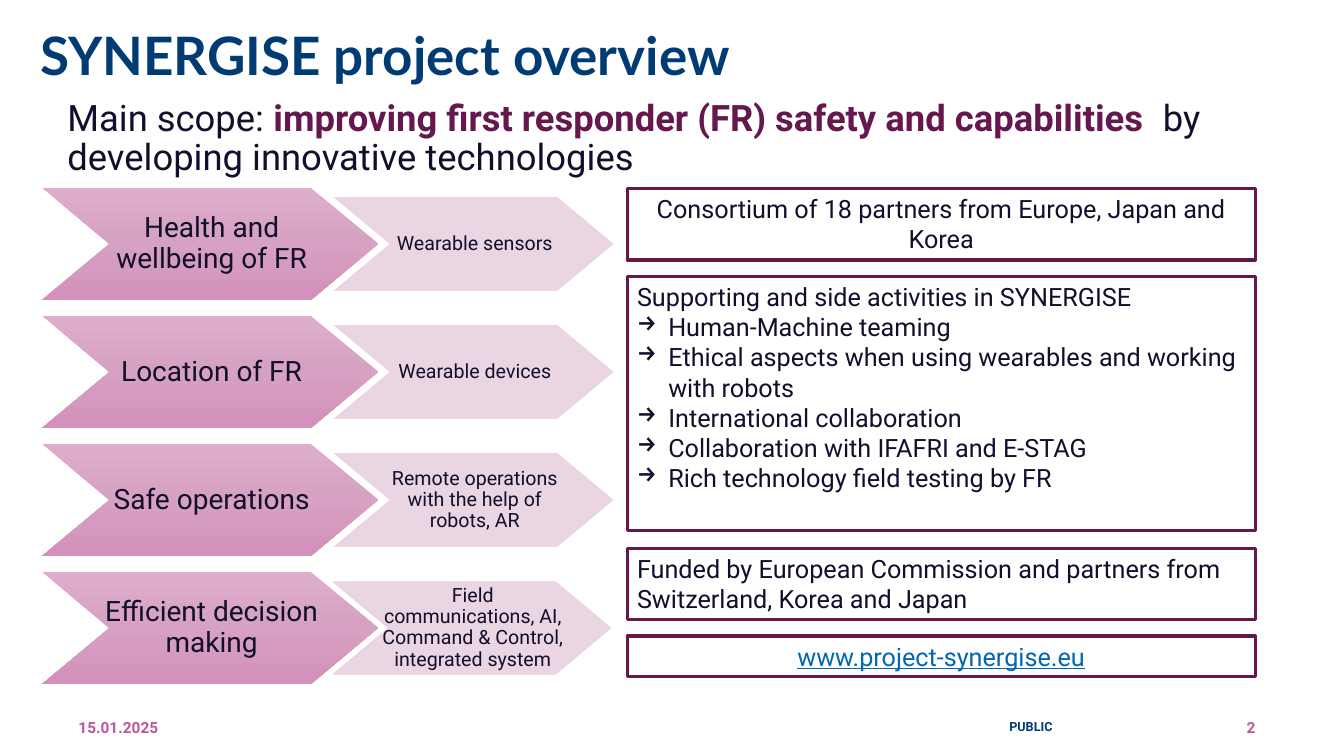
from lxml import etree
from pptx import Presentation
from pptx.dml.color import RGBColor
from pptx.enum.shapes import MSO_SHAPE as Preset
from pptx.enum.text import MSO_ANCHOR as Anchor, PP_ALIGN as Align
from pptx.oxml import parse_xml
from pptx.oxml.ns import nsdecls, qn
from pptx.util import Inches, Pt

COLORS = {
    "navy": "003C73", "ink": "110F2B", "plum": "65174E", "pink": "BF579D",
    "link": "0068B1", "pale": "E8D1DF",
    "top": "DDAECB", "middle": "D6A1C2", "bottom": "D390BA",
}
ROW_PITCH = 1.27
FIRST_ROW_CENTER = 2.42

# goal, means, left edge of the means
ROWS = [
    ("Health and wellbeing of FR", "Wearable sensors", 3.32),
    ("Location of FR", "Wearable devices", 3.32),
    ("Safe operations", "Remote operations with the help of robots, AR", 3.32),
    ("Efficient decision making",
     "Field communications, AI, Command & Control, integrated system", 3.3),
]
ACTIVITIES = [
    "Human-Machine teaming",
    "Ethical aspects when using wearables and working with robots",
    "International collaboration",
    "Collaboration with IFAFRI and E-STAG",
    "Rich technology field testing by FR",
]


def rgb(name):
    return RGBColor.from_string(COLORS[name])


def style(paragraph, size, color, bold=False, align=Align.LEFT, font="Roboto"):
    paragraph.alignment = align
    paragraph.font.name = font
    paragraph.font.size = Pt(size)
    paragraph.font.bold = bold
    paragraph.font.color.rgb = rgb(color)


def add_text(slide, box, text, size, color, anchor=Anchor.MIDDLE, **options):
    frame = slide.shapes.add_textbox(*map(Inches, box)).text_frame
    frame.word_wrap = True
    frame.vertical_anchor = anchor
    paragraph = frame.paragraphs[0]
    paragraph.text = text
    style(paragraph, size, color, **options)
    return paragraph


def add_arrow_bullet(paragraph):
    properties = paragraph._p.get_or_add_pPr()
    properties.set("marL", str(Inches(0.31)))
    properties.set("indent", str(Inches(-0.31)))
    etree.SubElement(properties, qn("a:buChar"), char="→")


def add_panel(slide, top, height, heading, bullets=(), align=Align.LEFT, color="ink"):
    panel = slide.shapes.add_shape(
        Preset.RECTANGLE, *map(Inches, (6.22, top, 6.23, height)))
    panel.shadow.inherit = False
    panel.fill.background()
    panel.line.color.rgb = rgb("plum")
    panel.line.width = Pt(2.25)
    frame = panel.text_frame
    frame.word_wrap = True
    frame.vertical_anchor = Anchor.TOP
    paragraph = frame.paragraphs[0]
    paragraph.text = heading
    style(paragraph, 18, color, align=align)
    for bullet in bullets:
        item = frame.add_paragraph()
        item.text = bullet
        add_arrow_bullet(item)
        style(item, 18, color)
    return paragraph


def add_chevron(slide, left, center, width, height, text, size, side_insets, edge_inset):
    notch = 0.6 * height
    top, bottom, right = center - height / 2, center + height / 2, left + width
    outline = [(right - notch, top), (right, center), (right - notch, bottom),
               (left, bottom), (left + notch, center)]
    builder = slide.shapes.build_freeform(Inches(left), Inches(top))
    builder.add_line_segments([(Inches(x), Inches(y)) for x, y in outline])
    chevron = builder.convert_to_shape()
    chevron.shadow.inherit = False
    frame = chevron.text_frame
    frame.word_wrap = True
    frame.vertical_anchor = Anchor.MIDDLE
    frame.margin_left, frame.margin_right = map(Inches, side_insets)
    frame.margin_top = frame.margin_bottom = Inches(edge_inset)
    paragraph = frame.paragraphs[0]
    paragraph.text = text
    paragraph.line_spacing = 0.9
    style(paragraph, size, "ink", align=Align.CENTER)
    return chevron


def fill_gradient(shape):
    shape.fill.gradient()
    shape.fill.gradient_angle = 270
    stops = shape._element.spPr.find(".//" + qn("a:gsLst"))
    stops[:] = [
        parse_xml(f'<a:gs {nsdecls("a")} pos="{position}">'
                  f'<a:srgbClr val="{COLORS[name]}"/></a:gs>')
        for position, name in ((0, "top"), (50000, "middle"), (100000, "bottom"))]
    shape.line.fill.background()


def fill_pale(shape):
    shape.fill.solid()
    shape.fill.fore_color.rgb = rgb("pale")
    shape.line.color.rgb = rgb("pale")
    shape.line.width = Pt(0.5)
    for color in shape._element.spPr.iter(qn("a:srgbClr")):
        etree.SubElement(color, qn("a:alpha"), val="90000")


def add_scope(slide):
    paragraph = add_text(slide, (0.57, 0.94, 12.2, 0.9), "Main scope: ", 26, "ink",
                         anchor=Anchor.TOP)
    paragraph.line_spacing = 0.9
    emphasis = paragraph.add_run()
    emphasis.text = "improving first responder (FR) safety and capabilities  "
    emphasis.font.bold = True
    emphasis.font.color.rgb = rgb("plum")
    paragraph.add_run().text = "by developing innovative technologies"


def main():
    presentation = Presentation()
    presentation.slide_width = Inches(13.33)
    presentation.slide_height = Inches(7.5)
    slide = presentation.slides.add_slide(presentation.slide_layouts[6])

    # Heading
    title = add_text(slide, (0.3, 0.22, 11.5, 0.72), "SYNERGISE project overview",
                     37.8, "navy", bold=True, font="Lato")
    title.line_spacing = 0.9
    add_scope(slide)

    # Goals and the means to reach them
    for index, (goal, means, means_left) in enumerate(ROWS):
        center = FIRST_ROW_CENTER + index * ROW_PITCH
        fill_gradient(add_chevron(slide, 0.42, center, 3.33, 1.11, goal, 20,
                                  (0.59, 0.56), 0.02))
        fill_pale(add_chevron(slide, means_left, center, 2.76, 0.92, means, 14,
                              (0.48, 0.46), 0.01))

    # Project facts
    add_panel(slide, 1.87, 0.71, "Consortium of 18 partners from Europe, Japan and Korea",
              align=Align.CENTER)
    add_panel(slide, 2.74, 2.52, "Supporting and side activities in SYNERGISE", ACTIVITIES)
    add_panel(slide, 5.44, 0.71,
              "Funded by European Commission and partners from Switzerland, Korea and Japan")
    website = add_panel(slide, 6.31, 0.4, "www.project-synergise.eu",
                        align=Align.CENTER, color="link")
    website.font.underline = True

    # Footer
    add_text(slide, (0.68, 7.02, 3, 0.4), "15.01.2025", 11, "pink", bold=True)
    add_text(slide, (9.06, 7.08, 2.33, 0.25), "PUBLIC", 9, "navy", anchor=Anchor.TOP,
             bold=True, align=Align.CENTER)
    add_text(slide, (11.54, 7.02, 1.01, 0.4), "2", 11, "pink", bold=True,
             align=Align.RIGHT)

    presentation.save("out.pptx")


if __name__ == "__main__":
    main()
